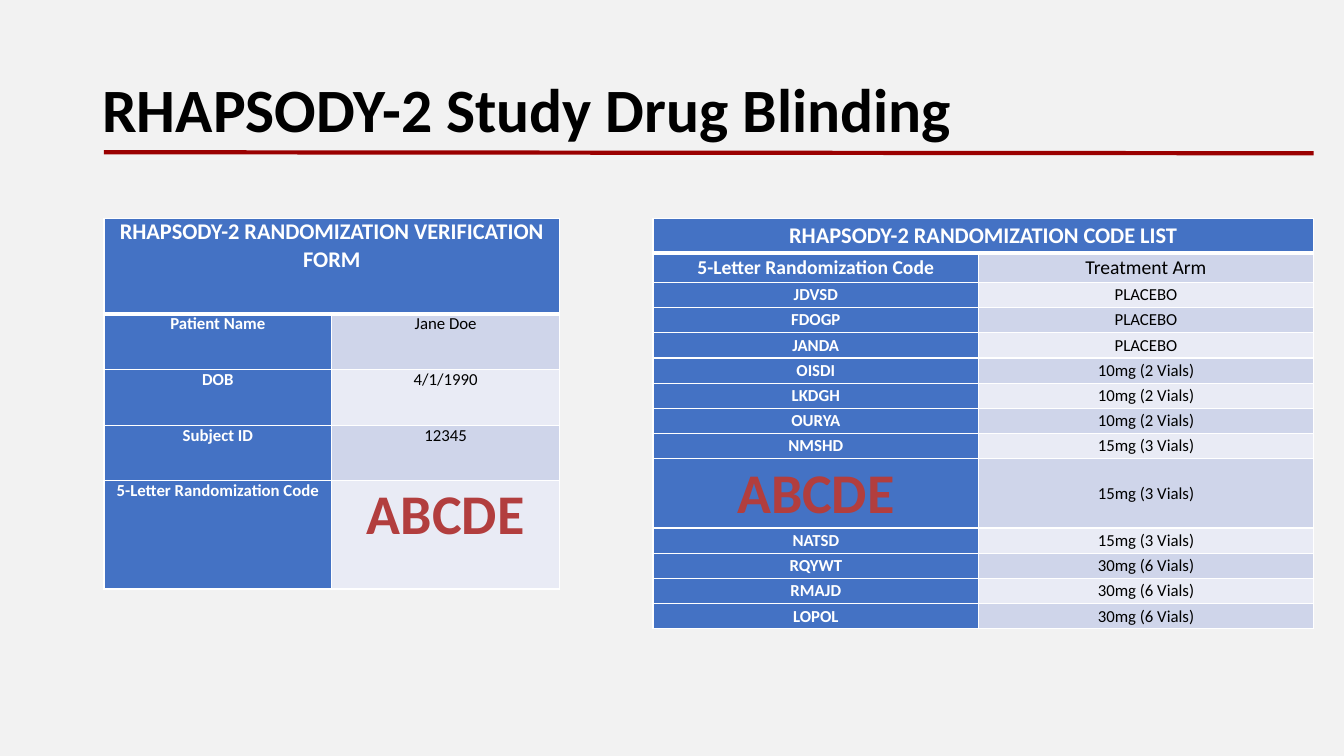
from dataclasses import dataclass

from lxml import etree
from pptx import Presentation
from pptx import util as u
from pptx.dml.color import RGBColor
from pptx.enum import shapes, text
from pptx.oxml import ns

PX = 9525
FONT = "Calibri"
CODE = "ABCDE"
CODE_SIZE = 40

BACKGROUND = RGBColor(0xF2, 0xF2, 0xF2)
BLACK = RGBColor(0x00, 0x00, 0x00)
WHITE = RGBColor(0xFF, 0xFF, 0xFF)
RULE_RED = RGBColor(0x9A, 0x00, 0x00)
CODE_RED = RGBColor(0xB2, 0x3E, 0x3E)
HEADER_BLUE = RGBColor(0x44, 0x72, 0xC4)
BANDS = (RGBColor(0xE9, 0xEB, 0xF5), RGBColor(0xCF, 0xD5, 0xEA))


@dataclass(frozen=True)
class Row:
    label: str
    value: str
    height: int
    size: int = 12


@dataclass(frozen=True)
class Grid:
    heading: str
    heading_height: int
    left: int
    top: int
    widths: tuple[int, int]
    rows: list[Row]
    anchor: text.MSO_ANCHOR
    code_anchor: text.MSO_ANCHOR
    code_outline: float


FORM = Grid(
    "RHAPSODY-2 RANDOMIZATION VERIFICATION FORM", 91, 99, 208, (217, 217),
    [
        Row("Patient Name", "Jane Doe", 53),
        Row("DOB", "4/1/1990", 53),
        Row("Subject ID", "12345", 53),
        Row("5-Letter Randomization Code", CODE, 103),
    ],
    text.MSO_ANCHOR.TOP, text.MSO_ANCHOR.TOP, 0.25,
)

ARMS = {
    "PLACEBO": ["JDVSD", "FDOGP", "JANDA"],
    "10mg (2 Vials)": ["OISDI", "LKDGH", "OURYA"],
    "15mg (3 Vials)": ["NMSHD", CODE, "NATSD"],
    "30mg (6 Vials)": ["RQYWT", "RMAJD", "LOPOL"],
}
CODE_LIST = Grid(
    "RHAPSODY-2 RANDOMIZATION CODE LIST", 33, 622, 208, (310, 319),
    [Row("5-Letter Randomization Code", "Treatment Arm", 28, 14)]
    + [Row(code, arm, 66 if code == CODE else 24)
       for arm, codes in ARMS.items() for code in codes],
    text.MSO_ANCHOR.MIDDLE, text.MSO_ANCHOR.BOTTOM, 1,
)


def px(length: int) -> u.Emu:
    return u.Emu(length * PX)


def add_span(para, words: str, size: int, color: RGBColor, bold: bool):
    span = para.add_run()
    span.text = words
    span.font.name = FONT
    span.font.size = u.Pt(size)
    span.font.bold = bold
    span.font.color.rgb = color
    return span


def line_element(tag: str, points: float, color: RGBColor):
    line = etree.Element(ns.qn(tag), w=str(u.Pt(points)))
    fill = etree.SubElement(line, ns.qn("a:solidFill"))
    etree.SubElement(fill, ns.qn("a:srgbClr"), val=str(color))
    return line


def style_cell(cell, fill: RGBColor, anchor: text.MSO_ANCHOR,
               top: int = 1, bottom: int = 1) -> None:
    """Set fill, margins and anchor; top and bottom are border points."""
    cell.fill.solid()
    cell.fill.fore_color.rgb = fill
    cell.margin_left = cell.margin_right = px(7)
    cell.margin_top = cell.margin_bottom = 0
    cell.vertical_anchor = anchor
    borders = (("a:lnL", 1), ("a:lnR", 1), ("a:lnT", top), ("a:lnB", bottom))
    properties = cell._tc.get_or_add_tcPr()
    for index, (tag, points) in enumerate(borders):
        properties.insert(index, line_element(tag, points, WHITE))


def write_cell(cell, words: str, size: int, color: RGBColor, bold: bool):
    para = cell.text_frame.paragraphs[0]
    para.alignment = text.PP_ALIGN.CENTER
    return add_span(para, words, size, color, bold)


def add_grid(page, grid: Grid) -> None:
    heights = [grid.heading_height] + [row.height for row in grid.rows]
    table = page.shapes.add_table(
        len(heights), 2, px(grid.left), px(grid.top),
        px(sum(grid.widths)), px(sum(heights))).table
    table.horz_banding = False
    for column, width in zip(table.columns, grid.widths):
        column.width = px(width)
    for table_row, height in zip(table.rows, heights):
        table_row.height = px(height)

    for cell in table.rows[0].cells:
        style_cell(cell, HEADER_BLUE, grid.anchor, bottom=3)
    table.cell(0, 0).merge(table.cell(0, 1))
    write_cell(table.cell(0, 0), grid.heading, 16, WHITE, True)

    for number, row in enumerate(grid.rows, start=1):
        columns = ((row.label, HEADER_BLUE, WHITE, True),
                   (row.value, BANDS[number % 2], BLACK, False))
        for column, (words, fill, color, bold) in enumerate(columns):
            cell = table.cell(number, column)
            is_code = words == CODE
            style_cell(cell, fill, grid.code_anchor if is_code else grid.anchor,
                       top=3 if number == 1 else 1)
            if is_code:
                span = write_cell(cell, words, CODE_SIZE, CODE_RED, True)
                outline = line_element("a:ln", grid.code_outline, BLACK)
                span.font._element.insert(0, outline)
            else:
                write_cell(cell, words, row.size, color, bold)


def add_title(page, words: str) -> None:
    box = page.shapes.add_textbox(px(88), px(38), px(1104), px(139))
    box.text_frame.word_wrap = True
    box.text_frame.vertical_anchor = text.MSO_ANCHOR.MIDDLE
    para = box.text_frame.paragraphs[0]
    para.line_spacing = 0.9
    add_span(para, words, 44, BLACK, True)


def add_title_rule(page) -> None:
    rule = page.shapes.add_connector(
        shapes.MSO_CONNECTOR.STRAIGHT, px(99), px(145), px(1251), px(146))
    rule.line.color.rgb = RULE_RED
    rule.line.width = u.Pt(3)
    etree.SubElement(rule._element.spPr, ns.qn("a:effectLst"))


def main() -> None:
    deck = Presentation()
    deck.slide_width, deck.slide_height = px(1280), px(720)
    page = deck.slides.add_slide(deck.slide_layouts[6])
    page.background.fill.solid()
    page.background.fill.fore_color.rgb = BACKGROUND
    add_title(page, "RHAPSODY-2 Study Drug Blinding")
    add_title_rule(page)
    for grid in (FORM, CODE_LIST):
        add_grid(page, grid)
    deck.save("out.pptx")


if __name__ == "__main__":
    main()
